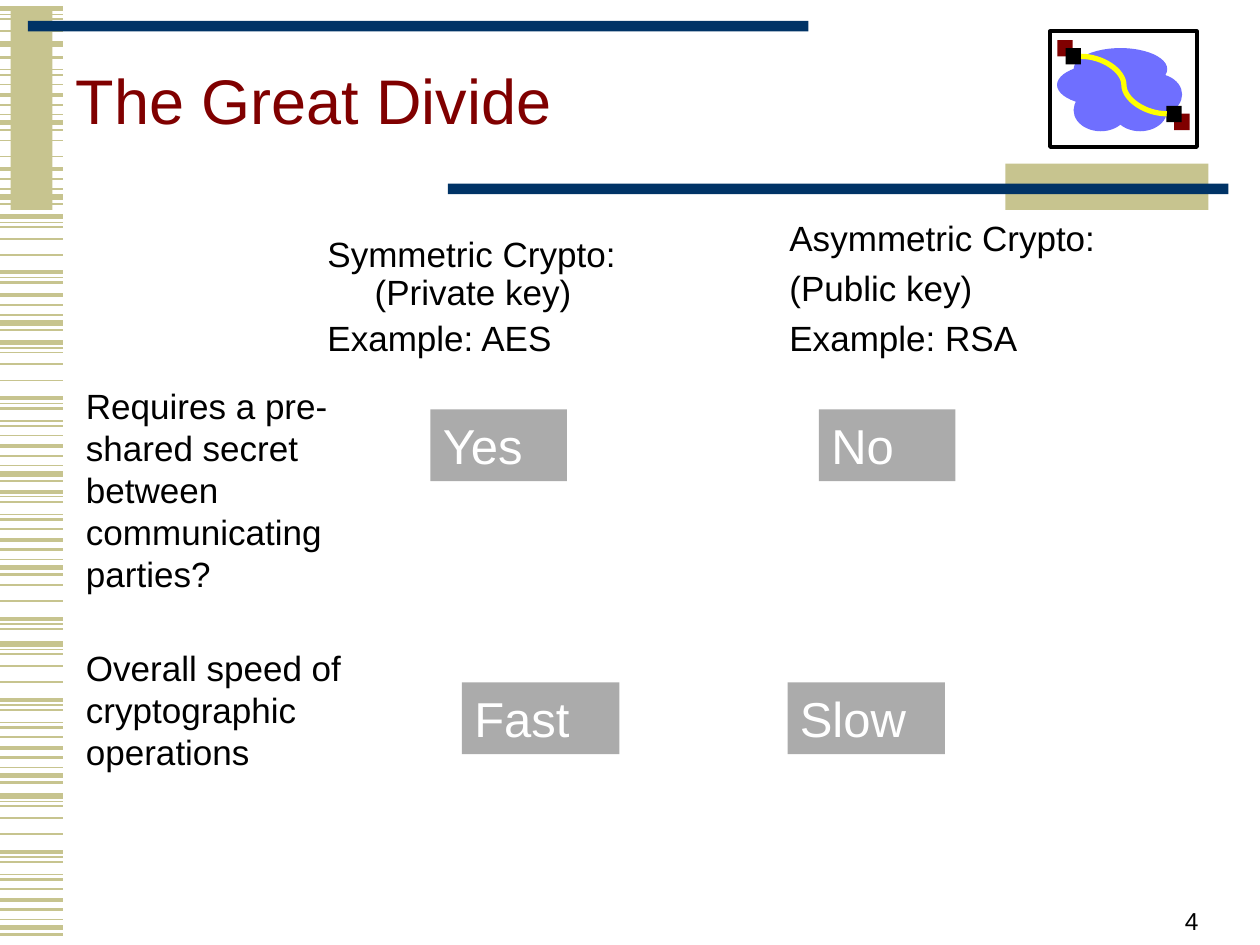
from lxml import etree
from pptx import Presentation
from pptx.dml.color import RGBColor
from pptx.enum.shapes import MSO_CONNECTOR, MSO_SHAPE
from pptx.enum.text import MSO_ANCHOR, PP_ALIGN
from pptx.oxml.ns import qn
from pptx.util import Pt

RECTANGLE, OVAL = MSO_SHAPE.RECTANGLE, MSO_SHAPE.OVAL
STRAIGHT, CURVE = MSO_CONNECTOR.STRAIGHT, MSO_CONNECTOR.CURVE
TOP, MIDDLE, BOTTOM = MSO_ANCHOR.TOP, MSO_ANCHOR.MIDDLE, MSO_ANCHOR.BOTTOM
LEFT, RIGHT = PP_ALIGN.LEFT, PP_ALIGN.RIGHT
TITLE_ONLY = 5
FONT = "Arial"
COLORS = {
    "khaki": "C7C48F", "navy": "003366", "maroon": "800000", "cloud": "6F6FFF",
    "cable": "FFFF00", "gray": "ABABAB", "black": "000000", "white": "FFFFFF",
}

TITLE = "The Great Divide"
HEADINGS = [
    (["Symmetric Crypto: (Private key)", "Example: AES"], (180, 132, 234, 96), 0.9),
    (["Asymmetric Crypto:", "(Public key)", "Example: RSA"], (444, 120, 234, 102), 1),
]
QUESTIONS = [
    ("Requires a pre-shared secret between communicating parties?", (42, 216, 162, 128)),
    ("Overall speed of cryptographic operations", (42, 366, 162, 80)),
]
ANSWERS = [
    ("Yes", (246, 234, 78, 41)),
    ("No", (468, 234, 78, 41)),
    ("Fast", (264, 390, 90, 41)),
    ("Slow", (450, 390, 90, 41)),
]
PAGE_NUMBER = "4"

STRIPE_LENGTH = 36
STRIPE_PATTERN = [
    (0, 3), (3.2, 0.75), (5.8, 1), (12.6, 1), (21.8, 1), (31.9, 2.25),
    (34.8, 0.75), (37.7, 1.5), (44.9, 0.75), (47.8, 1.5), (53.3, 1),
    (59.3, 2.25), (65, 1.5), (70.6, 0.75), (75.2, 3), (79.2, 1.5),
]
STRIPE_BLOCKS = [
    (5, 0, 4), (25.2, 0, 1), (-5, 7, 16), (67.7, 3, 5), (37.4, 11, 16),
    (123.8, 0, 8), (109.4, 11, 16), (195.6, 0, 16), (249.1, 5, 16),
    (321.8, 3, 8), (368, 0, 16), (454.9, 0, 16),
]
BANDS = [
    ((6, 6, 24, 114), "khaki"),
    ((16, 12, 446, 6), "navy"),
    ((574.5, 93.5, 116, 26.5), "khaki"),
    ((256, 105, 446, 6), "navy"),
]
EMBLEM_FRAME = (600, 18, 84, 66)
CLOUD_PUFFS = [
    (604, 36.5, 53.5, 24), (613.5, 27.5, 53.5, 24), (613.5, 51, 31, 24),
    (636, 51, 31, 24), (636, 42, 31, 24), (644.5, 42, 31, 24),
]
NODE_SIZE = (8.8, 9.4)
NODES = [
    ((671, 65), "maroon"), ((604.2, 22.9), "maroon"),
    ((608.9, 27.5), "black"), ((666.5, 60.5), "black"),
]
CABLE = (617.8, 32.2, 666.7, 65)


def color(name):
    """Return the named colour."""
    return RGBColor.from_string(COLORS[name])


def points(values):
    """Convert numbers to point lengths."""
    return [Pt(value) for value in values]


def write(shape, lines, size=20, ink="black", anchor=TOP, align=LEFT,
          spacing=1, before=0, hanging=0):
    """Fill a shape with formatted paragraphs."""
    frame = shape.text_frame
    frame.word_wrap = True
    frame.vertical_anchor = anchor
    for index, line in enumerate(lines):
        para = frame.add_paragraph() if index else frame.paragraphs[0]
        para.alignment = align
        para.line_spacing = spacing
        para.space_before = Pt(before)
        if hanging:
            properties = para._p.get_or_add_pPr()
            properties.set("marL", str(Pt(hanging)))
            properties.set("indent", str(-Pt(hanging)))
        span = para.add_run()
        span.text = line
        span.font.name = FONT
        span.font.size = Pt(size)
        span.font.color.rgb = color(ink)


def add_block(page, kind, area, fill, border=None):
    """Add a flat filled shape."""
    shape = page.shapes.add_shape(kind, *points(area))
    shape.shadow.inherit = False
    shape.fill.solid()
    shape.fill.fore_color.rgb = color(fill)
    if border:
        shape.line.color.rgb = color(border)
        shape.line.width = Pt(2.25)
    else:
        shape.line.fill.background()
    return shape


def add_line(page, kind, ends, ink, width):
    """Add a line without a shadow."""
    line = page.shapes.add_connector(kind, *points(ends))
    line.line.color.rgb = color(ink)
    line.line.width = Pt(width)
    etree.SubElement(line._element.spPr, qn("a:effectLst"))


def add_text(page, lines, area, **style):
    """Add a text box."""
    write(page.shapes.add_textbox(*points(area)), lines, **style)


def add_decoration(page):
    """Draw the stripes, the bands and the network emblem."""
    for base, first, end in STRIPE_BLOCKS:
        for offset, width in STRIPE_PATTERN[first:end]:
            height = round(base + offset, 2)
            add_line(page, STRAIGHT, (0, height, STRIPE_LENGTH, height), "khaki", width)
    for area, fill in BANDS:
        add_block(page, RECTANGLE, area, fill)
    add_block(page, RECTANGLE, EMBLEM_FRAME, "white", border="black")
    for area in CLOUD_PUFFS:
        add_block(page, OVAL, area, "cloud")
    for corner, fill in NODES:
        add_block(page, RECTANGLE, corner + NODE_SIZE, fill)
    add_line(page, CURVE, CABLE, "cable", 3)


def main():
    """Build the slide and save it."""
    deck = Presentation()
    deck.slide_width, deck.slide_height = Pt(720), Pt(540)
    page = deck.slides.add_slide(deck.slide_layouts[TITLE_ONLY])
    add_decoration(page)

    title = page.shapes.title
    title.left, title.top, title.width, title.height = points((36, 12, 564, 96))
    write(title, [TITLE], size=36, ink="maroon", anchor=MIDDLE, spacing=0.85)

    for lines, area, spacing in HEADINGS:
        add_text(page, lines, area, spacing=spacing, before=4.8, hanging=27)
    for question, area in QUESTIONS:
        add_text(page, [question], area)
    for answer, area in ANSWERS:
        write(add_block(page, RECTANGLE, area, "gray"), [answer], size=28, ink="white")
    add_text(page, [PAGE_NUMBER], (519, 502, 173, 36), size=14, anchor=BOTTOM, align=RIGHT)
    deck.save("out.pptx")


if __name__ == "__main__":
    main()
